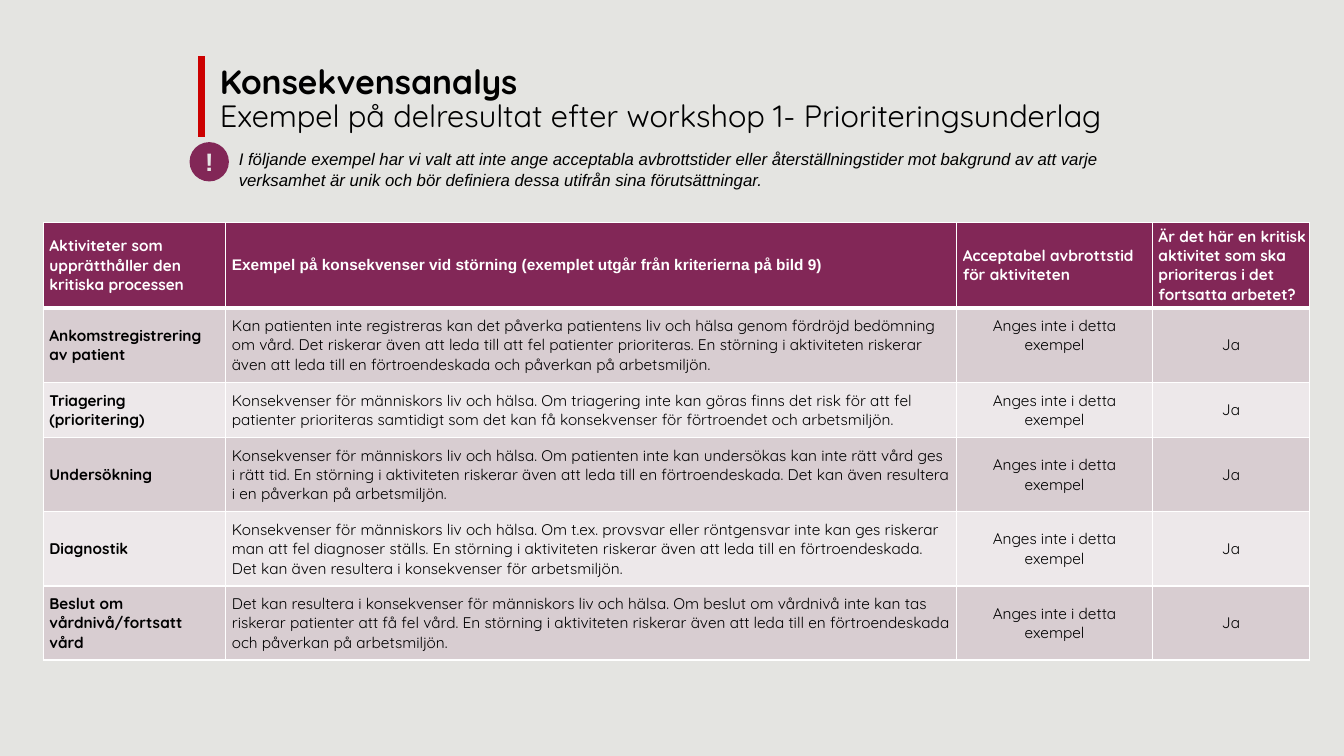
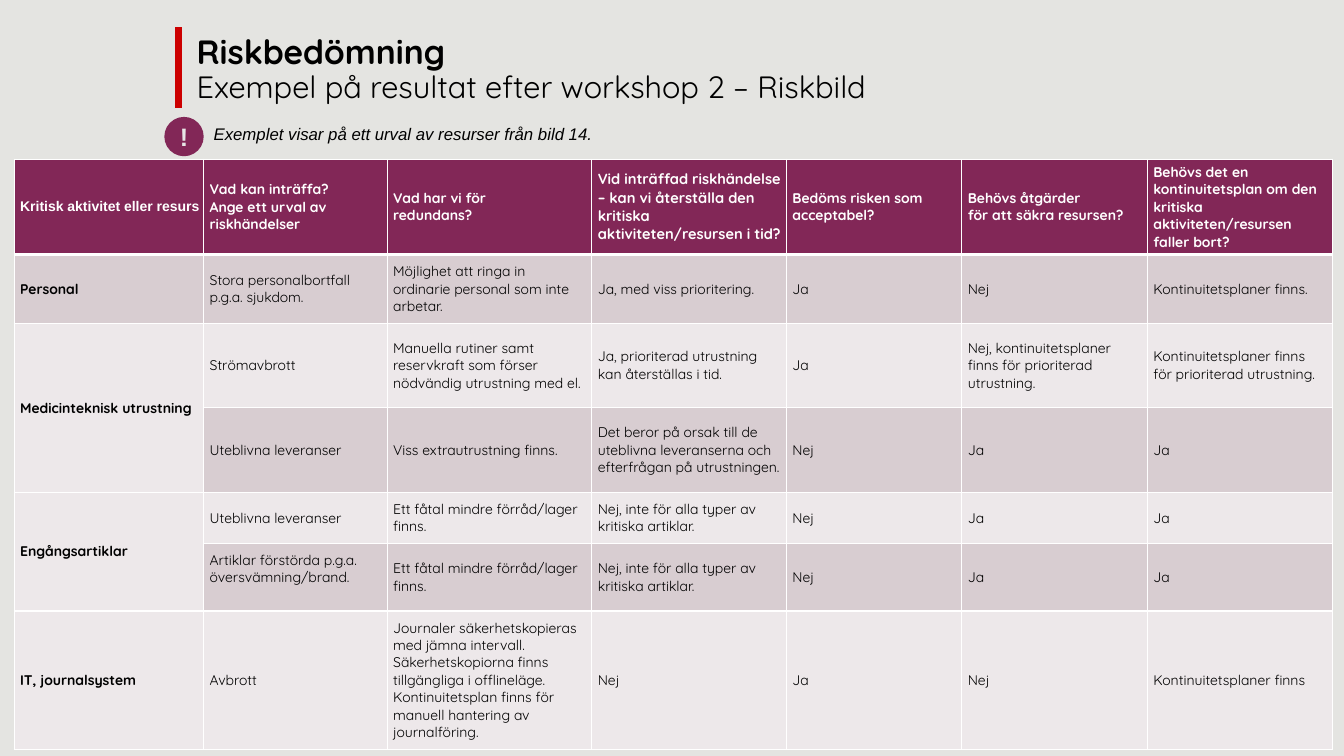
import copy
from dataclasses import dataclass

import pptx
import pptx.dml.color
import pptx.enum.shapes
import pptx.enum.text
import pptx.oxml
import pptx.oxml.ns
import pptx.util
from pptx.util import Inches

ALIGN = pptx.enum.text.PP_ALIGN
ANCHOR = pptx.enum.text.MSO_ANCHOR
AUTO_SIZE = pptx.enum.text.MSO_AUTO_SIZE


@dataclass(frozen=True)
class Theme:
    background: str = "E4E4E1"
    accent: str = "822757"
    rule: str = "CC0000"
    bands: tuple = ("D8CDD1", "EDE8EA")
    ink: str = "000000"
    white: str = "FFFFFF"
    badge_text: str = "E7E6E6"
    font: str = "Quicksand"
    note_font: str = "Arial"
    title_size: float = 24
    subtitle_size: float = 22
    badge_size: float = 18
    note_size: float = 12


THEME = Theme()


@dataclass(frozen=True)
class Cell:
    """A table cell that departs from the format of its row."""
    text: str
    font: str = THEME.font
    size: float = None
    anchor: object = ANCHOR.MIDDLE


def rgb(value):
    return pptx.dml.color.RGBColor.from_string(value)


def add_text(p, text, *, size, font=THEME.font, color=THEME.ink, bold=False, italic=False):
    """Add formatted text to a paragraph; each newline becomes a line break."""
    for i, line in enumerate(text.split("\n")):
        if i:
            p.add_line_break()
            p._p[-1].append(copy.deepcopy(r._r.rPr))
        if line:
            r = p.add_run()
            r.text = line
            r.font.name, r.font.size = font, pptx.util.Pt(size)
            r.font.bold, r.font.italic = bold, italic
            r.font.color.rgb = rgb(color)


def set_borders(cell, top=1, bottom=1):
    tc_pr = cell._tc.get_or_add_tcPr()
    widths = {"lnL": 1, "lnR": 1, "lnT": top, "lnB": bottom}
    for i, (tag, width) in enumerate(widths.items()):
        tc_pr.insert(i, pptx.oxml.parse_xml(
            f'<a:{tag} {pptx.oxml.ns.nsdecls("a")} w="{pptx.util.Pt(width)}">'
            f'<a:solidFill><a:srgbClr val="{THEME.white}"/></a:solidFill></a:{tag}>'))


def fill_cell(cell, content, *, fill, size, color, bold, align, margins):
    if isinstance(content, str):
        content = Cell(content)
    cell.fill.solid()
    cell.fill.fore_color.rgb = rgb(fill)
    cell.vertical_anchor = content.anchor
    (cell.margin_left, cell.margin_top,
     cell.margin_right, cell.margin_bottom) = map(Inches, margins)
    p = cell.text_frame.paragraphs[0]
    p.alignment = align
    add_text(p, content.text, size=content.size or size, font=content.font,
             color=color, bold=bold)


def add_grid(slide, left, top, widths, heights, rows, size, centred=()):
    """Place a banded table; a None cell is merged into the one above it."""
    table = slide.shapes.add_table(
        len(rows), len(widths), Inches(left), Inches(top),
        Inches(sum(widths)), Inches(sum(heights))).table
    table.first_row = table.horz_banding = False
    for column, width in zip(table.columns, widths):
        column.width = Inches(width)
    for row, height in zip(table.rows, heights):
        row.height = Inches(height)

    for i, row in enumerate(rows):
        header = i == 0
        for j, content in enumerate(row):
            cell = table.cell(i, j)
            if content is None:
                table.cell(i - 1, j).merge(cell)
            elif header:
                fill_cell(cell, content, fill=THEME.accent, size=size, color=THEME.white,
                          bold=True, align=ALIGN.LEFT, margins=(0.06, 0.04, 0, 0.04))
            else:
                fill_cell(cell, content, fill=THEME.bands[(i - 1) % 2], size=size,
                          color=THEME.ink, bold=j == 0,
                          align=ALIGN.CENTER if j in centred else ALIGN.LEFT,
                          margins=(0.06, 0.08, 0.06, 0.08))
            set_borders(cell, top=3 if i == 1 else 1, bottom=3 if header else 1)


def add_heading(slide, left, top, width, title, subtitle):
    """Place the red rule at left, top and the two-line title beside it."""
    rule = slide.shapes.add_connector(
        pptx.enum.shapes.MSO_CONNECTOR.STRAIGHT,
        Inches(left), Inches(top), Inches(left), Inches(top + 0.8))
    rule.line.color.rgb = rgb(THEME.rule)
    rule.line.width = pptx.util.Pt(5)
    rule._element.spPr.append(
        pptx.oxml.parse_xml(f'<a:effectLst {pptx.oxml.ns.nsdecls("a")}/>'))

    sp = slide.shapes.title
    sp.left, sp.top = Inches(left + 0.08), Inches(top + 0.03)
    sp.width, sp.height = Inches(width), Inches(0.8)
    tf = sp.text_frame
    tf.auto_size = AUTO_SIZE.NONE
    tf.vertical_anchor = ANCHOR.MIDDLE
    p = tf.paragraphs[0]
    p.alignment = ALIGN.LEFT
    p.line_spacing = 0.9
    add_text(p, title + "\n", size=THEME.title_size, bold=True)
    add_text(p, subtitle, size=THEME.subtitle_size)


def add_note(slide, left, top, width, height, text):
    """Place the round badge at left, top and the note to its right."""
    side = 0.39
    badge = slide.shapes.add_shape(
        pptx.enum.shapes.MSO_SHAPE.OVAL,
        Inches(left), Inches(top), Inches(side), Inches(side))
    badge.shadow.inherit = False
    badge.fill.solid()
    badge.fill.fore_color.rgb = rgb(THEME.accent)
    badge.line.fill.background()
    tf = badge.text_frame
    tf.margin_left = tf.margin_top = tf.margin_right = tf.margin_bottom = 0
    tf.vertical_anchor = ANCHOR.MIDDLE
    p = tf.paragraphs[0]
    p.alignment = ALIGN.CENTER
    add_text(p, "!", size=THEME.badge_size, font=THEME.note_font,
             color=THEME.badge_text, bold=True)

    box = slide.shapes.add_textbox(
        Inches(left + side), Inches(top + 0.02), Inches(width), Inches(height))
    tf = box.text_frame
    tf.word_wrap = True
    tf.auto_size = AUTO_SIZE.SHAPE_TO_FIT_TEXT
    p = tf.paragraphs[0]
    p.space_after = pptx.util.Pt(12)
    add_text(p, text, size=THEME.note_size, font=THEME.note_font, italic=True)


def new_slide(prs):
    return prs.slides.add_slide(prs.slide_layouts.get_by_name("Title Only"))


def build_consequences(prs):
    slide = new_slide(prs)
    header = ["Aktiviteter som upprätthåller den kritiska processen",
              Cell("Exempel på konsekvenser vid störning (exemplet utgår från "
                   "kriterierna på bild 9)", font=THEME.note_font),
              "Acceptabel avbrottstid\nför aktiviteten",
              "Är det här en kritisk aktivitet som ska prioriteras i det fortsatta arbetet?"]
    activities = [
        ("Ankomstregistrering av patient",
         "Kan patienten inte registreras kan det påverka patientens liv och hälsa genom "
         "fördröjd bedömning om vård. Det riskerar även att leda till att fel patienter "
         "prioriteras. En störning i aktiviteten riskerar även att leda till en "
         "förtroendeskada och påverkan på arbetsmiljön."),
        ("Triagering (prioritering)",
         "Konsekvenser för människors liv och hälsa. Om triagering inte kan göras finns det "
         "risk för att fel patienter prioriteras samtidigt som det kan få konsekvenser för "
         "förtroendet och arbetsmiljön."),
        ("Undersökning",
         "Konsekvenser för människors liv och hälsa. Om patienten inte kan undersökas kan "
         "inte rätt vård ges i rätt tid. En störning i aktiviteten riskerar även att leda "
         "till en förtroendeskada. Det kan även resultera i en påverkan på arbetsmiljön."),
        ("Diagnostik",
         "Konsekvenser för människors liv och hälsa. Om t.ex. provsvar eller röntgensvar "
         "inte kan ges riskerar man att fel diagnoser ställs. En störning i aktiviteten "
         "riskerar även att leda till en förtroendeskada. Det kan även resultera i "
         "konsekvenser för arbetsmiljön."),
        ("Beslut om vårdnivå/fortsatt vård",
         "Det kan resultera i konsekvenser för människors liv och hälsa. Om beslut om "
         "vårdnivå inte kan tas riskerar patienter att få fel vård. En störning i "
         "aktiviteten riskerar även att leda till en förtroendeskada och påverkan på "
         "arbetsmiljön."),
    ]
    rows = [header]
    for i, (activity, consequence) in enumerate(activities):
        outage = Cell("Anges inte i detta exempel",
                      anchor=ANCHOR.MIDDLE if i else ANCHOR.TOP)
        rows.append([activity, consequence, outage, "Ja"])
    add_grid(slide, 0.43, 2.21, [1.81, 7.25, 1.94, 1.56],
             [0.83, 0.73, 0.55, 0.73, 0.73, 0.73], rows, size=11, centred=(2, 3))
    add_heading(slide, 2, 0.56, 10.91, "Konsekvensanalys",
                "Exempel på delresultat efter workshop 1- Prioriteringsunderlag")
    add_note(slide, 1.88, 1.41, 9.1, 0.5,
             "I följande exempel har vi valt att inte ange acceptabla avbrottstider eller "
             "återställningstider mot bakgrund av att varje verksamhet är unik och bör "
             "definiera dessa utifrån sina förutsättningar.")


def build_risks(prs):
    slide = new_slide(prs)
    small_store = ["Ett fåtal mindre förråd/lager finns.",
                   "Nej, inte för alla typer av kritiska artiklar.", "Nej", "Ja", "Ja"]
    rows = [
        [Cell("Kritisk aktivitet eller resurs", font=THEME.note_font),
         "Vad kan inträffa?\nAnge ett urval av riskhändelser",
         "Vad har vi för\nredundans?",
         Cell("Vid inträffad riskhändelse – kan vi återställa den kritiska "
              "aktiviteten/resursen i tid?", size=10.5),
         "Bedöms risken som acceptabel?",
         "Behövs åtgärder\nför att säkra resursen?",
         "Behövs det en kontinuitetsplan om den kritiska aktiviteten/resursen\n"
         "faller bort?"],
        ["Personal", "Stora personalbortfall p.g.a. sjukdom.",
         "Möjlighet att ringa in ordinarie personal som inte arbetar.",
         "Ja, med viss prioritering.", "Ja", "Nej", "Kontinuitetsplaner finns."],
        ["Medicinteknisk utrustning", "Strömavbrott",
         "Manuella rutiner samt reservkraft som förser nödvändig utrustning med el.",
         "Ja, prioriterad utrustning kan återställas i tid.", "Ja",
         "Nej, kontinuitetsplaner finns för prioriterad utrustning.",
         "Kontinuitetsplaner finns för prioriterad utrustning."],
        [None, "Uteblivna leveranser", "Viss extrautrustning finns.",
         "Det beror på orsak till de uteblivna leveranserna och efterfrågan på "
         "utrustningen.", "Nej", "Ja", "Ja"],
        ["Engångsartiklar", "Uteblivna leveranser", *small_store],
        [None, Cell("Artiklar förstörda p.g.a. översvämning/brand.", anchor=ANCHOR.TOP),
         *small_store],
        ["IT, journalsystem", "Avbrott",
         "Journaler säkerhetskopieras med jämna intervall. Säkerhetskopiorna finns "
         "tillgängliga i offlineläge. Kontinuitetsplan finns för manuell hantering av "
         "journalföring.", "Nej", "Ja", "Nej", "Kontinuitetsplaner finns"],
    ]
    add_grid(slide, 0.14, 1.58, [1.88, 1.82, 2.03, 1.93, 1.74, 1.84, 1.84],
             [0.88, 0.67, 0.84, 0.84, 0.5, 0.67, 1.35], rows, size=10)
    add_heading(slide, 1.77, 0.27, 9.83, "Riskbedömning",
                "Exempel på resultat efter workshop 2 – Riskbild")
    add_note(slide, 1.63, 1.16, 6.22, 0.3,
             "Exemplet visar på ett urval av resurser från bild 14.")


def main():
    prs = pptx.Presentation()
    prs.slide_width, prs.slide_height = Inches(13.33), Inches(7.5)
    background = prs.slide_master.background.fill
    background.solid()
    background.fore_color.rgb = rgb(THEME.background)
    build_consequences(prs)
    build_risks(prs)
    prs.save("out.pptx")


if __name__ == "__main__":
    main()
